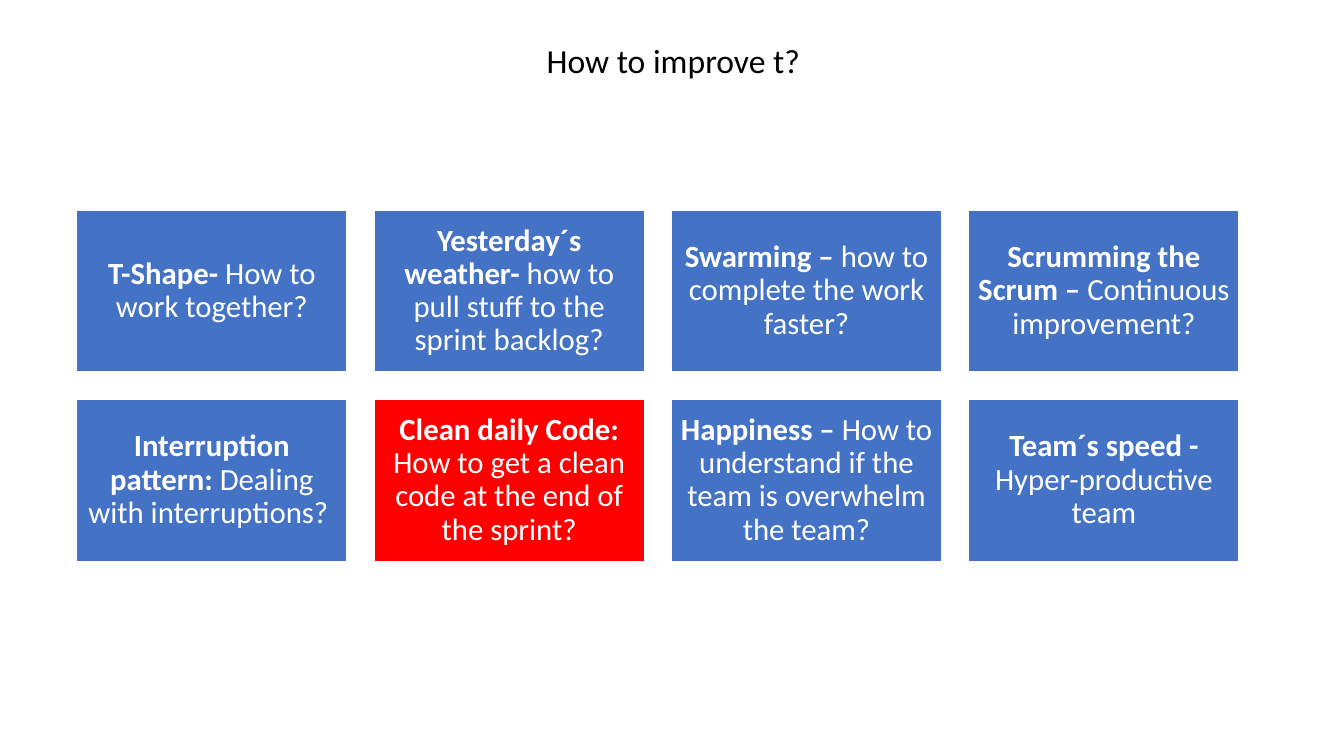
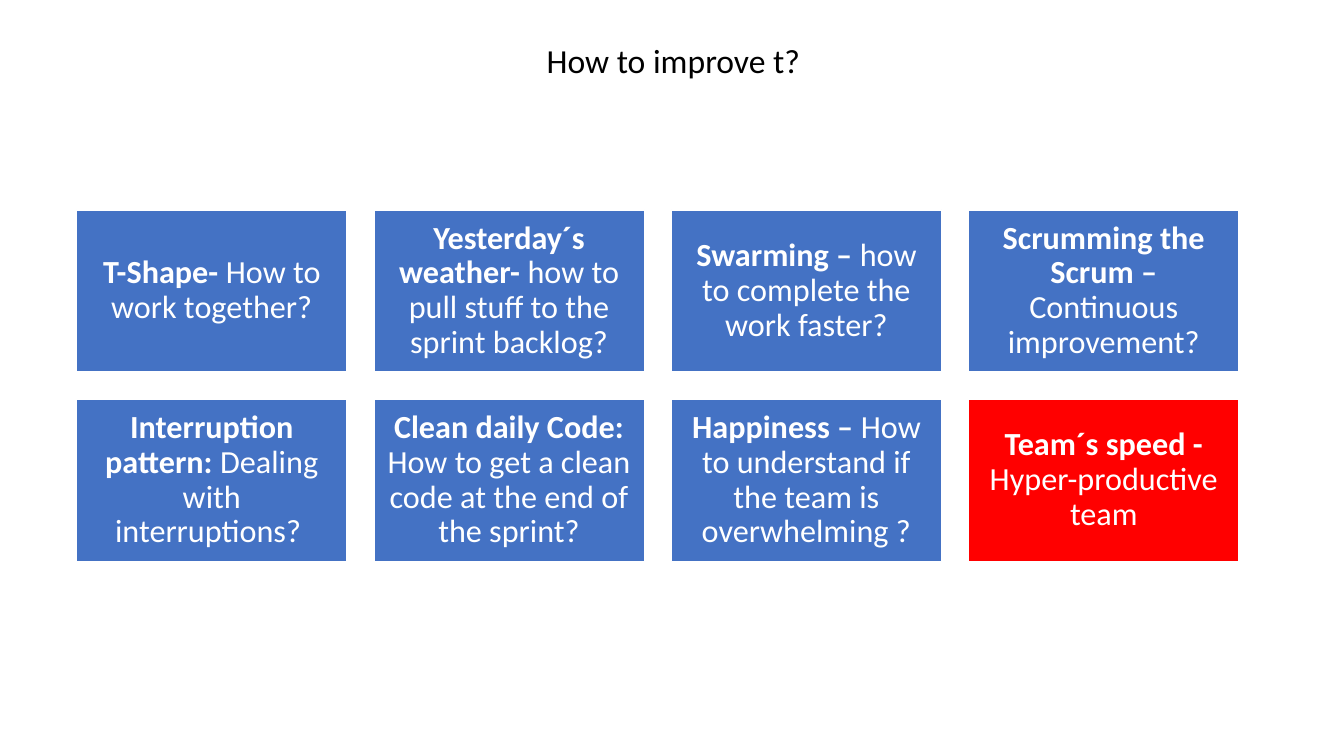
"""Build two slides of sprint improvement patterns, each highlighting one card."""
from dataclasses import dataclass

from pptx import Presentation
from pptx.dml.color import RGBColor
from pptx.enum.shapes import MSO_SHAPE
from pptx.enum.text import MSO_ANCHOR, MSO_AUTO_SIZE, PP_ALIGN
from pptx.presentation import Presentation as Deck
from pptx.slide import Slide
from pptx.text.text import TextFrame
from pptx.util import Pt

COLORS = {"card": "4472C4", "highlight": "FF0000", "white": "FFFFFF", "title": "000000"}
FONT = "Calibri"
TITLE = "How to improve t?"
TITLE_BOX = {"left": Pt(121), "top": Pt(24.5), "width": Pt(720), "height": Pt(45.4)}
COLUMNS = 4
GRID_LEFT, GRID_TOP = 54.8, 149.9
CARD_W, CARD_H, GAP = 193, 115.8, 19.4


@dataclass(frozen=True)
class Card:
    """A pattern name and the question it answers."""
    name: str
    question: str


@dataclass(frozen=True)
class Page:
    """The settings that differ from slide to slide."""
    size: int
    highlight: str
    happiness: str


PAGES = (
    Page(22, "Clean daily Code: ", "How to understand if the team is overwhelm the team?"),
    Page(23, "Team´s speed - ", "How to understand if the team is overwhelming ?"),
)


def cards_for(page: Page) -> list[Card]:
    """Return the cards of a page in reading order."""
    return [
        Card("T-Shape- ", "How to work together?"),
        Card("Yesterday´s weather- ", "how to pull stuff to the sprint backlog?"),
        Card("Swarming – ", "how to complete the work faster?"),
        Card("Scrumming the Scrum – ", "Continuous improvement?"),
        Card("Interruption pattern: ", "Dealing with interruptions? "),
        Card("Clean daily Code: ", "How to get a clean code at the end of the sprint?"),
        Card("Happiness – ", page.happiness),
        Card("Team´s speed - ", "Hyper-productive team"),
    ]


def rgb(name: str) -> RGBColor:
    """Look up a named colour."""
    return RGBColor.from_string(COLORS[name])


def apply(target: object, values: dict[str, object]) -> None:
    """Set each attribute in the dict on the target."""
    for key, value in values.items():
        setattr(target, key, value)


def write(tf: TextFrame, runs: list[tuple[str, bool]], size: float, color: str,
          inset: float, anchor: MSO_ANCHOR) -> None:
    """Write one centred paragraph of plain and bold runs."""
    apply(tf, {"word_wrap": True, "auto_size": MSO_AUTO_SIZE.NONE, "vertical_anchor": anchor})
    apply(tf, {f"margin_{side}": Pt(inset) for side in ("left", "top", "right", "bottom")})
    p = tf.paragraphs[0]
    apply(p, {"alignment": PP_ALIGN.CENTER, "line_spacing": 0.9})
    for text, bold in runs:
        r = p.add_run()
        r.text = text
        apply(r.font, {"name": FONT, "size": Pt(size), "bold": bold})
        r.font.color.rgb = rgb(color)


def add_title(s: Slide) -> None:
    """Place and fill the title placeholder."""
    sp = s.shapes.title
    apply(sp, TITLE_BOX)
    write(sp.text_frame, [(TITLE, False)], 24, "title", 7.2, MSO_ANCHOR.TOP)


def add_card(s: Slide, index: int, card: Card, page: Page) -> None:
    """Draw a card in its grid cell."""
    row, col = divmod(index, COLUMNS)
    left, top = GRID_LEFT + col * (CARD_W + GAP), GRID_TOP + row * (CARD_H + GAP)
    sp = s.shapes.add_shape(MSO_SHAPE.RECTANGLE, Pt(left), Pt(top), Pt(CARD_W), Pt(CARD_H))
    sp.shadow.inherit = False
    sp.fill.solid()
    sp.fill.fore_color.rgb = rgb("highlight" if card.name == page.highlight else "card")
    sp.line.color.rgb = rgb("white")
    sp.line.width = Pt(1)
    runs = [(card.name, True), (card.question, False)]
    write(sp.text_frame, runs, page.size, "white", page.size * 0.3, MSO_ANCHOR.MIDDLE)


def add_page(prs: Deck, page: Page) -> None:
    """Add one slide with the title and the card grid."""
    s = prs.slides.add_slide(prs.slide_layouts[5])
    add_title(s)
    for index, card in enumerate(cards_for(page)):
        add_card(s, index, card, page)


def main() -> None:
    """Build and save the deck."""
    prs = Presentation()
    apply(prs, {"slide_width": Pt(960), "slide_height": Pt(540)})
    for page in PAGES:
        add_page(prs, page)
    prs.save("out.pptx")


if __name__ == "__main__":
    main()
